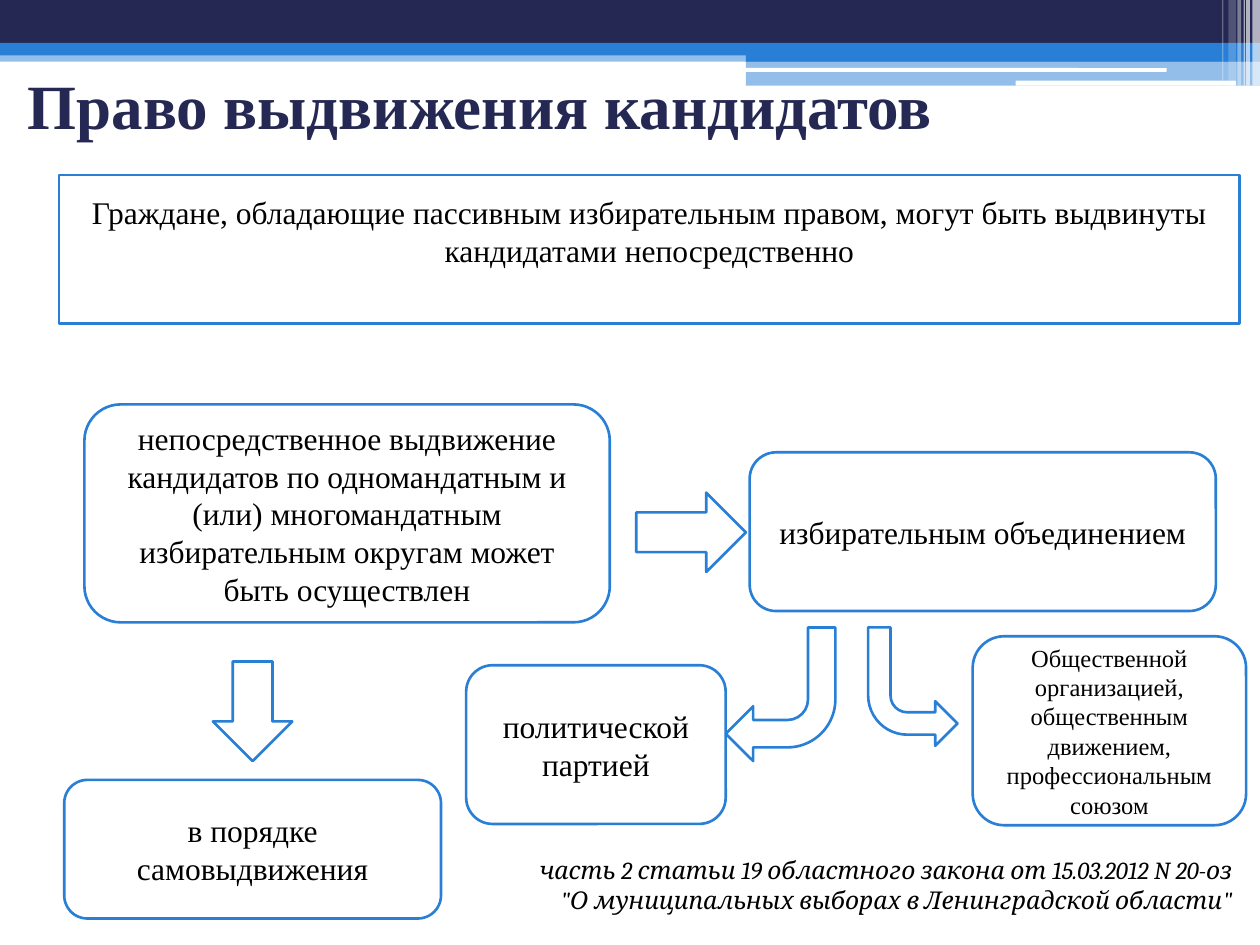
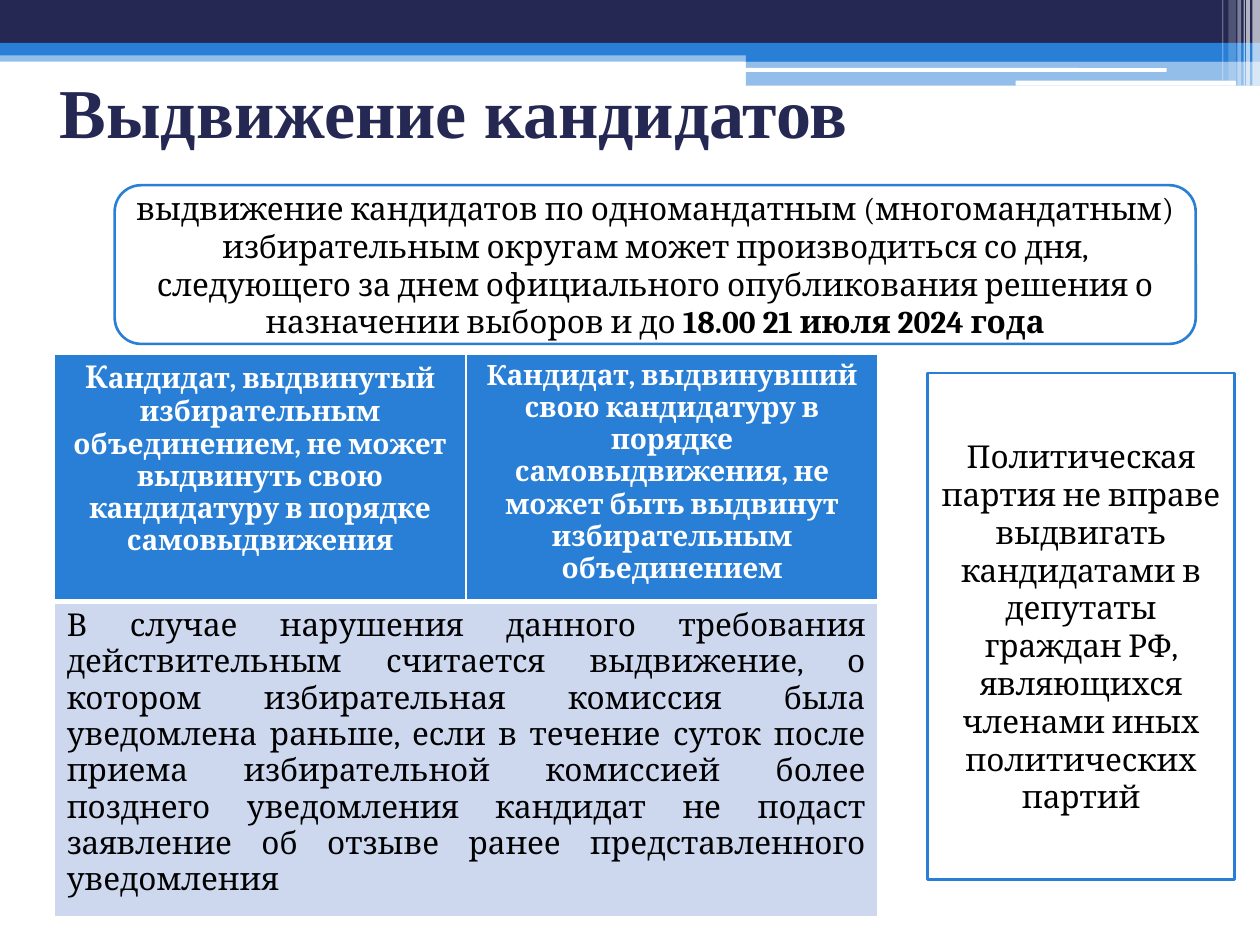
from lxml.etree import SubElement
from pptx import Presentation
from pptx.dml.color import RGBColor
from pptx.enum.shapes import MSO_SHAPE as KIND
from pptx.enum.text import MSO_ANCHOR as ANCHOR, PP_ALIGN as ALIGN
from pptx.oxml import parse_xml
from pptx.oxml.ns import nsdecls, qn
from pptx.util import Inches, Pt

NAVY, BLUE, PALE, WHITE, BLACK = "242852", "297FD5", "CDD8EF", "FFFFFF", "000000"
SERIF, CAMBRIA = "Times New Roman", "Cambria"
color = RGBColor.from_string


def add_block(page, kind, place, fill=WHITE, line=BLUE, alpha=100):
    """Add a preset shape at (left, top, width, height) in inches."""
    shape = page.shapes.add_shape(kind, *map(Inches, place))
    shape.shadow.inherit = False
    shape.fill.solid()
    shape.fill.fore_color.rgb = color(fill)
    if alpha < 100:
        tint = shape.fill._xPr.find(".//" + qn("a:srgbClr"))
        SubElement(tint, qn("a:alpha"), val=str(alpha * 1000))
    if line:
        shape.line.color.rgb = color(line)
        shape.line.width = Pt(1.5)
    else:
        shape.line.fill.background()
    return shape


def write(frame, paragraphs, size=18, font=SERIF, ink=BLACK, bold=False,
          italic=False, align=ALIGN.CENTER, anchor=ANCHOR.MIDDLE):
    """Fill a text frame; a paragraph is a list of (text, size, bold) or a string."""
    frame.word_wrap = True
    frame.vertical_anchor = anchor
    for i, spans in enumerate(paragraphs):
        para = frame.add_paragraph() if i else frame.paragraphs[0]
        para.alignment = align
        if isinstance(spans, str):
            spans = [(spans, size, bold)]
        for text, span_size, span_bold in spans:
            span = para.add_run()
            span.text = text
            span.font.size = Pt(span_size)
            span.font.name = font
            span.font.bold = span_bold
            span.font.italic = italic
            span.font.color.rgb = color(ink)


deck = Presentation()
deck.slide_width, deck.slide_height = Inches(10), Inches(7.5)

# Shared header: coloured bands, white rules, then translucent stripes
bands = [
    (KIND.RECTANGLE, (0, 0.4, 10, 0.09), BLUE, 50),
    (KIND.RECTANGLE, (0, 0, 10, 0.34), NAVY, 100),
    (KIND.RECTANGLE, (0, 0.34, 10, 0.1), BLUE, 100),
    (KIND.RECTANGLE, (5.92, 0.39, 4.08, 0.1), BLUE, 100),
    (KIND.RECTANGLE, (5.92, 0.48, 4.08, 0.2), BLUE, 50),
    (KIND.ROUNDED_RECTANGLE, (5.91, 0.54, 3.35, 0.03), WHITE, 100),
    (KIND.ROUNDED_RECTANGLE, (8.06, 0.64, 1.75, 0.04), WHITE, 100),
]
stripes = [(9.94, 0.06, 0.68, 65), (9.89, 0.03, 0.68, 65), (9.87, 0.01, 0.68, 60),
           (9.82, 0.03, 0.68, 40), (9.75, 0.06, 0.64, 20), (9.7, 0.01, 0.64, 30)]
bands += [(KIND.RECTANGLE, (left, 0, width, height), WHITE, alpha)
          for left, width, height, alpha in stripes]

titles = [
    ("Право выдвижения кандидатов", (0.12, 0.28, 8.91, 1.1), 36, ALIGN.LEFT),
    ("Выдвижение кандидатов", (-0.02, 0.44, 7.24, 0.87), 40, ALIGN.CENTER),
]
pages = []
for title, place, size, align in titles:
    page = deck.slides.add_slide(deck.slide_layouts[6])
    for kind, band_place, fill, alpha in bands:
        add_block(page, kind, band_place, fill, None, alpha)
    box = page.shapes.add_textbox(*map(Inches, place))
    write(box.text_frame, [title], size=size, ink=NAVY, bold=True, align=align)
    pages.append(page)
rights_page, terms_page = pages

# Slide 1: who may nominate
citizens = add_block(rights_page, KIND.RECTANGLE, (0.47, 1.39, 9.37, 1.18))
citizens.text_frame.margin_bottom = Inches(0.35)
write(citizens.text_frame, ["Граждане, обладающие пассивным избирательным правом, "
                            "могут быть выдвинуты кандидатами непосредственно"])

nominators = [
    ("непосредственное выдвижение кандидатов по одномандатным и (или) многомандатным "
     "избирательным округам может быть осуществлен", (0.67, 3.21, 4.17, 1.73), 18),
    ("в порядке самовыдвижения", (0.51, 6.19, 2.99, 1.1), 18),
    ("избирательным объединением", (5.95, 3.59, 3.7, 1.26), 18),
    ("политической партией", (3.7, 5.28, 2.06, 1.26), 18),
    ("Общественной организацией, общественным движением, профессиональным союзом",
     (7.72, 5.05, 2.17, 1.5), 14),
]
for text, place, size in nominators:
    block = add_block(rights_page, KIND.ROUNDED_RECTANGLE, place)
    write(block.text_frame, [text], size=size)

add_block(rights_page, KIND.DOWN_ARROW, (1.69, 5.25, 0.63, 0.79))
add_block(rights_page, KIND.RIGHT_ARROW, (5.05, 3.91, 0.87, 0.63))
to_party = add_block(rights_page, KIND.BENT_ARROW, (5.76, 4.98, 0.87, 1.06))
to_party.rotation = 180
to_union = add_block(rights_page, KIND.BENT_ARROW, (6.89, 4.98, 0.71, 0.94))
to_union.element.spPr.xfrm.set("flipV", "1")

law = rights_page.shapes.add_textbox(*map(Inches, (3.66, 6.74, 6.22, 0.57)))
write(law.text_frame, ["часть 2 статьи 19 областного закона от 15.03.2012 N 20-оз",
                       '"О муниципальных выборах в Ленинградской области"'],
      size=14, font=CAMBRIA, italic=True, align=ALIGN.RIGHT, anchor=ANCHOR.TOP)

# Slide 2: deadlines and restrictions
table = terms_page.shapes.add_table(2, 2, *map(Inches, (0.43, 2.81, 6.54, 4.27))).table
table.rows[0].height, table.rows[1].height = Inches(1.88), Inches(2.39)
table.cell(1, 0).merge(table.cell(1, 1))
headings = [
    [[("К", 18, True), ("андидат, выдвинутый", 16, True)],
     "избирательным",
     "объединением, не может выдвинуть свою кандидатуру в порядке самовыдвижения"],
    ["Кандидат, выдвинувший",
     "свою кандидатуру в",
     "порядке самовыдвижения, не может быть выдвинут избирательным объединением"],
]
for column, heading in enumerate(headings):
    write(table.cell(0, column).text_frame, heading, size=16, font=CAMBRIA,
          ink=WHITE, bold=True, anchor=ANCHOR.TOP)
write(table.cell(1, 0).text_frame,
      ["В случае нарушения данного требования действительным считается выдвижение, "
       "о котором избирательная комиссия была уведомлена раньше, если в течение суток "
       "после приема избирательной комиссией более позднего уведомления кандидат не "
       "подаст заявление об отзыве ранее представленного уведомления"],
      font=CAMBRIA, align=ALIGN.JUSTIFY, anchor=ANCHOR.TOP)

for row, (fill, bottom) in enumerate([(BLUE, 3), (PALE, 1)]):
    for cell in table.rows[row].cells:
        cell.fill.solid()
        cell.fill.fore_color.rgb = color(fill)
        properties = cell._tc.get_or_add_tcPr()
        for i, (side, width) in enumerate(zip("LRTB", (1, 1, 1, bottom))):
            properties.insert(i, parse_xml(
                f'<a:ln{side} {nsdecls("a")} w="{Pt(width)}"><a:solidFill>'
                f'<a:srgbClr val="{WHITE}"/></a:solidFill></a:ln{side}>'))

period = add_block(terms_page, KIND.ROUNDED_RECTANGLE, (0.91, 1.47, 8.58, 1.26))
write(period.text_frame,
      ["выдвижение кандидатов по одномандатным (многомандатным)",
       [("избирательным округам может производиться со дня, следующего за днем "
         "официального опубликования решения о назначении выборов и до ", 18, False),
        ("18.00 21 июля 2024 года", 18, True)]], font=CAMBRIA)
party_limit = add_block(terms_page, KIND.RECTANGLE, (7.36, 2.96, 2.44, 4.02))
write(party_limit.text_frame,
      ["Политическая партия не вправе выдвигать кандидатами в депутаты граждан РФ, "
       "являющихся членами иных политических партий"], font=CAMBRIA)

deck.save("out.pptx")
